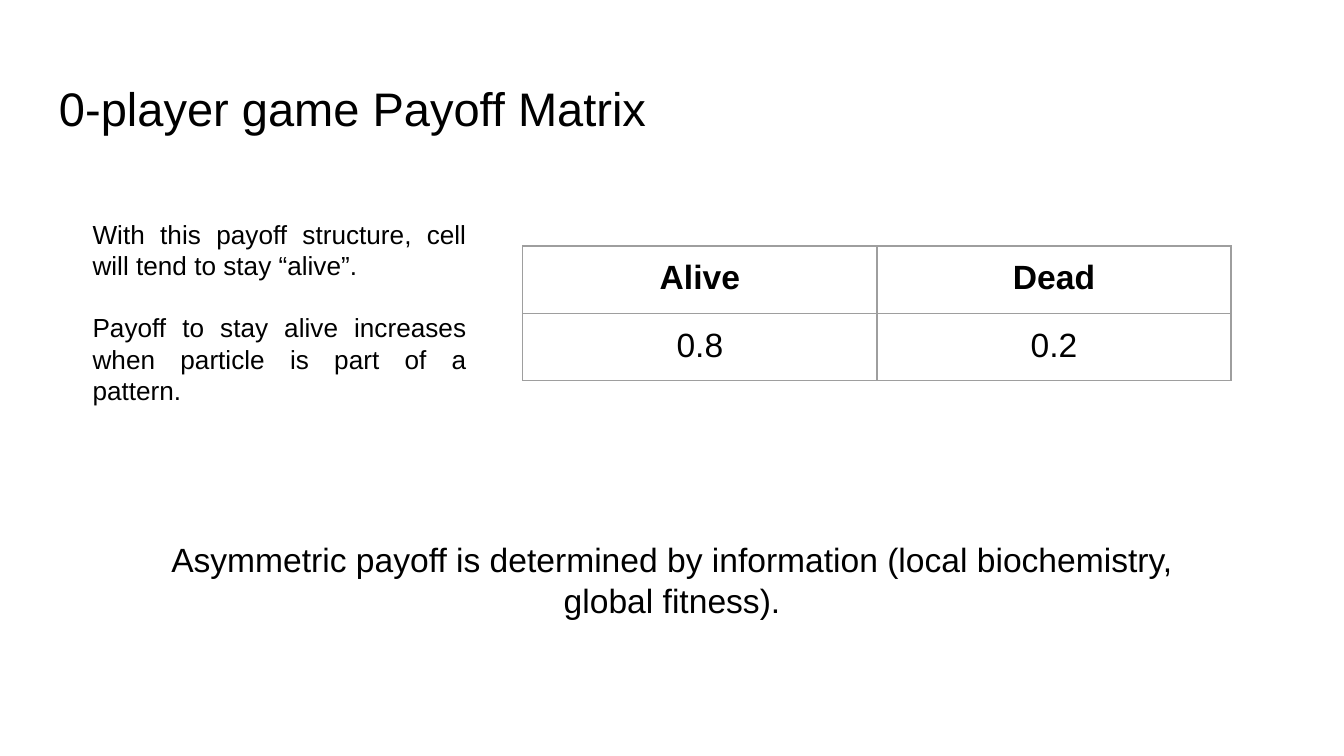
from lxml import etree
from pptx import Presentation
from pptx.dml.color import RGBColor
from pptx.enum.text import MSO_ANCHOR, PP_ALIGN
from pptx.oxml.ns import qn
from pptx.util import Inches, Pt

LEFT, CENTER, JUSTIFY = PP_ALIGN.LEFT, PP_ALIGN.CENTER, PP_ALIGN.JUSTIFY
TOP = MSO_ANCHOR.TOP
FONT = "Arial"
BLACK, WHITE, GRAY = "000000", "FFFFFF", "9E9E9E"
INSET = Inches(0.1)
BODY_LEADING = 1.21
BLANK_LAYOUT = 6

PAYOFFS = [["Alive", "Dead"], ["0.8", "0.2"]]
NOTES = [
    "With this payoff structure, cell will tend to stay “alive”.",
    "Payoff to stay alive increases when particle is part of a pattern.",
]


def color(value):
    return RGBColor.from_string(value)


def write(frame, *texts, size=18, bold=False, align=LEFT, gap=0, leading=None):
    """Write one paragraph per text, with gap points between them."""
    for index, text in enumerate(texts):
        paragraph = frame.paragraphs[0] if index == 0 else frame.add_paragraph()
        paragraph.alignment = align
        paragraph.space_before = Pt(gap if index else 0)
        if leading:
            paragraph.line_spacing = Pt(round(size * leading, 1))
        run = paragraph.add_run()
        run.text = text
        run.font.name = FONT
        run.font.size = Pt(size)
        run.font.bold = bold
        run.font.color.rgb = color(BLACK)


def set_margins(target):
    target.margin_left = target.margin_right = INSET
    target.margin_top = target.margin_bottom = INSET
    target.vertical_anchor = TOP


def add_text(slide, box, *texts, **text_format):
    shape = slide.shapes.add_textbox(*map(Inches, box))
    frame = shape.text_frame
    frame.word_wrap = True
    set_margins(frame)
    write(frame, *texts, **text_format)


def set_borders(cell, value, width):
    properties = cell._tc.get_or_add_tcPr()
    for index, side in enumerate(("a:lnL", "a:lnR", "a:lnT", "a:lnB")):
        line = etree.Element(qn(side), w=str(Pt(width)))
        fill = etree.SubElement(line, qn("a:solidFill"))
        etree.SubElement(fill, qn("a:srgbClr"), val=value)
        properties.insert(index, line)


def add_payoff_table(slide, box, rows):
    shape = slide.shapes.add_table(len(rows), len(rows[0]), *map(Inches, box))
    table = shape.table
    table.first_row = table.horz_banding = False
    for row_index, row in enumerate(rows):
        for column_index, text in enumerate(row):
            cell = table.cell(row_index, column_index)
            set_margins(cell)
            cell.fill.background()
            set_borders(cell, GRAY, 0.75)
            write(cell.text_frame, text, bold=row_index == 0, align=CENTER)


def build_payoff_slide(presentation):
    slide = presentation.slides.add_slide(presentation.slide_layouts[BLANK_LAYOUT])
    slide.background.fill.solid()
    slide.background.fill.fore_color.rgb = color(WHITE)

    # Title
    add_text(slide, (0.34, 0.49, 9.32, 0.63), "0-player game Payoff Matrix", size=25.2)

    # Conclusion below the table
    add_text(slide, (0.99, 3.91, 8.02, 0.81),
             "Asymmetric payoff is determined by information "
             "(local biochemistry, global fitness).",
             align=CENTER, leading=BODY_LEADING)

    # Payoff matrix
    add_payoff_table(slide, (3.89, 1.83, 5.27, 1), PAYOFFS)

    # Explanation beside the table
    add_text(slide, (0.59, 1.52, 2.98, 1.62), *NOTES,
             size=14, align=JUSTIFY, gap=16.5, leading=BODY_LEADING)


def main():
    presentation = Presentation()
    # Widescreen, 16 to 9
    presentation.slide_width = Inches(10)
    presentation.slide_height = presentation.slide_width * 9 // 16
    build_payoff_slide(presentation)
    presentation.save("out.pptx")


if __name__ == "__main__":
    main()
